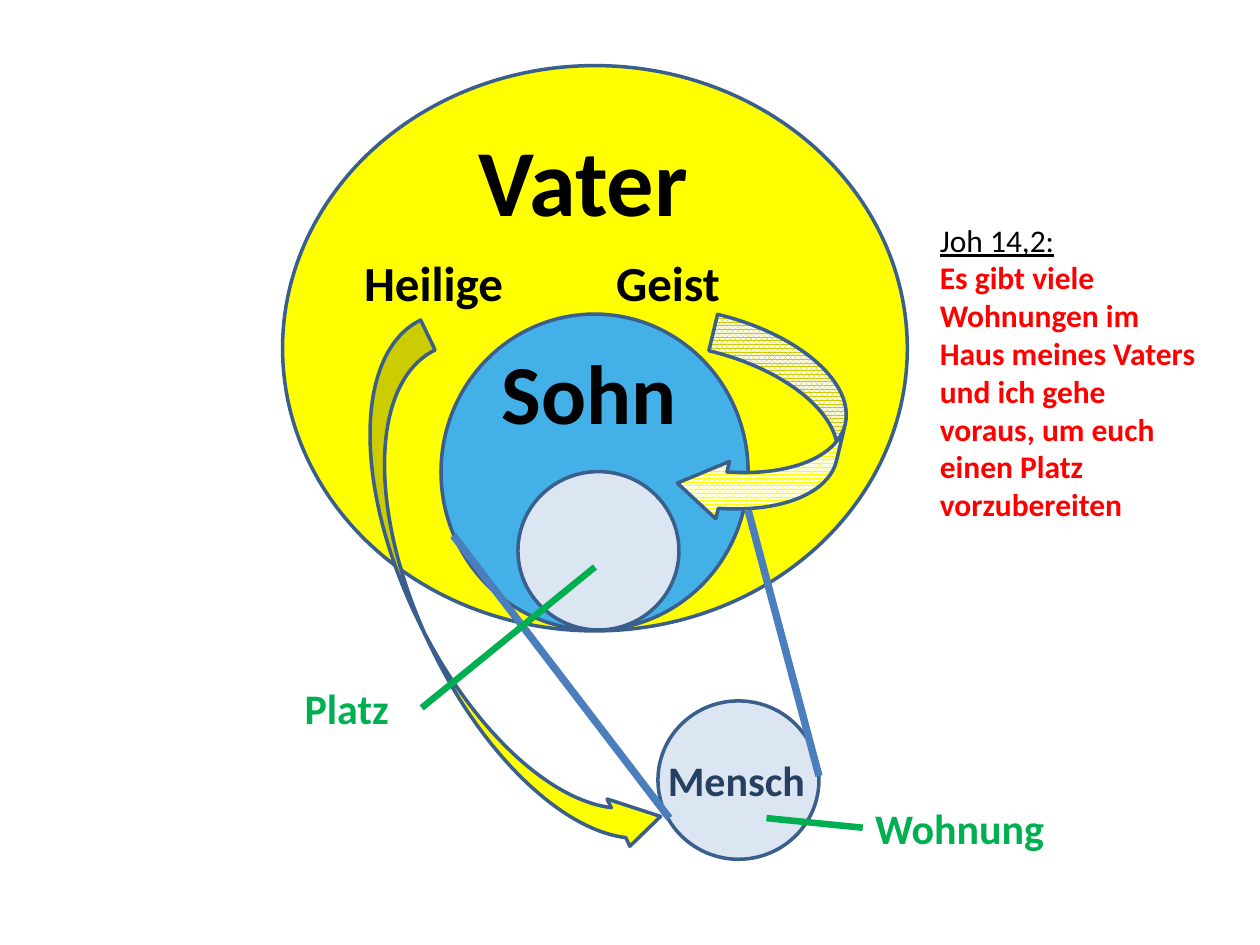
from lxml.etree import SubElement
from pptx import Presentation
from pptx.dml.color import RGBColor
from pptx.enum.dml import MSO_PATTERN
from pptx.enum.shapes import MSO_CONNECTOR, MSO_SHAPE
from pptx.enum.text import MSO_AUTO_SIZE
from pptx.oxml.ns import qn
from pptx.util import Pt

COLORS = {
    "yellow": "FFFF00", "sky": "43B0E7", "pale": "DCE6F2",
    "edge": "3A5F8C", "blue": "4B7EBC", "green": "00B050",
    "navy": "254061", "red": "FF0000", "black": "000000", "white": "FFFFFF",
}


def color(name):
    return RGBColor.from_string(COLORS[name])


class Canvas:
    font = "Calibri"
    edge = 2
    bends = (0.25, 0.394, 0.305)

    def __init__(self, slide):
        self.slide = slide

    def shape(self, kind, box, fill):
        shape = self.slide.shapes.add_shape(kind, *map(Pt, box))
        shape.shadow.inherit = False
        shape.fill.solid()
        shape.fill.fore_color.rgb = color(fill)
        shape.line.color.rgb = color("edge")
        shape.line.width = Pt(self.edge)
        return shape

    def circle(self, box, fill):
        return self.shape(MSO_SHAPE.OVAL, box, fill)

    def arrow(self, box, turn, flip=False, dotted=False):
        shape = self.shape(MSO_SHAPE.CURVED_RIGHT_ARROW, box, "yellow")
        for index, bend in enumerate(self.bends):
            shape.adjustments[index] = bend
        shape.rotation = turn
        if flip:
            shape._element.spPr.find(qn("a:xfrm")).set("flipH", "1")
        if dotted:
            shape.fill.patterned()
            shape.fill.pattern = MSO_PATTERN.PERCENT_80
            shape.fill.fore_color.rgb = color("yellow")
            shape.fill.back_color.rgb = color("white")

    def line(self, start, end, tint, width):
        line = self.slide.shapes.add_connector(
            MSO_CONNECTOR.STRAIGHT, *map(Pt, start + end))
        line.line.color.rgb = color(tint)
        line.line.width = Pt(width)
        SubElement(line._element.spPr, qn("a:effectLst"))

    def text(self, box, words, size, tint="black"):
        frame = self.slide.shapes.add_textbox(*map(Pt, box)).text_frame
        frame.word_wrap = True
        frame.auto_size = MSO_AUTO_SIZE.SHAPE_TO_FIT_TEXT
        frame.text = words
        for par in frame.paragraphs:
            for run in par.runs:
                run.font.name = self.font
                run.font.size = Pt(size)
                run.font.bold = True
                run.font.color.rgb = color(tint)
        return frame


def main():
    deck = Presentation()
    deck.slide_width, deck.slide_height = Pt(720), Pt(540)
    art = Canvas(deck.slides.add_slide(deck.slide_layouts[6]))

    art.circle((161.5, 37.5, 357, 323), "yellow")
    art.circle((252, 179.5, 175.5, 180.5), "sky")
    art.text((266.5, 66, 147.5, 73), "Vater", 54)
    art.text((279.5, 191, 132, 65.5), "Sohn", 48)
    art.arrow((395.5, 188, 85.5, 116), 13.4, flip=True, dotted=True)
    art.text((201, 141, 304.5, 41), "Heilige\t\tGeist", 28)

    art.circle((376, 400.5, 92, 90.5), "pale")
    art.text((374.5, 427.5, 99.5, 36), "Mensch", 24, "navy")
    art.line((427.5, 291.5), (468, 443.5), "blue", 4.25)
    art.line((259, 306), (382.5, 467.5), "blue", 4.25)
    art.arrow((240, 183, 76, 330), 334.2)

    verse = art.text(
        (530, 122.5, 164, 204),
        "Joh 14,2:\nEs gibt viele Wohnungen im Haus meines Vaters "
        "und ich gehe voraus, um euch einen Platz vorzubereiten",
        18, "red")
    source = verse.paragraphs[0].runs[0].font
    source.bold = False
    source.underline = True
    source.color.rgb = color("black")

    art.circle((296, 269.5, 92, 90.5), "pale")
    art.text((493, 455, 147.5, 36), "Wohnung", 24, "green")
    art.line((493, 473), (438, 467.5), "green", 3.75)
    art.text((167, 386.5, 73.5, 36), "Platz", 24, "green")
    art.line((340, 324), (241, 404.5), "green", 3.75)

    deck.save("out.pptx")


if __name__ == "__main__":
    main()
